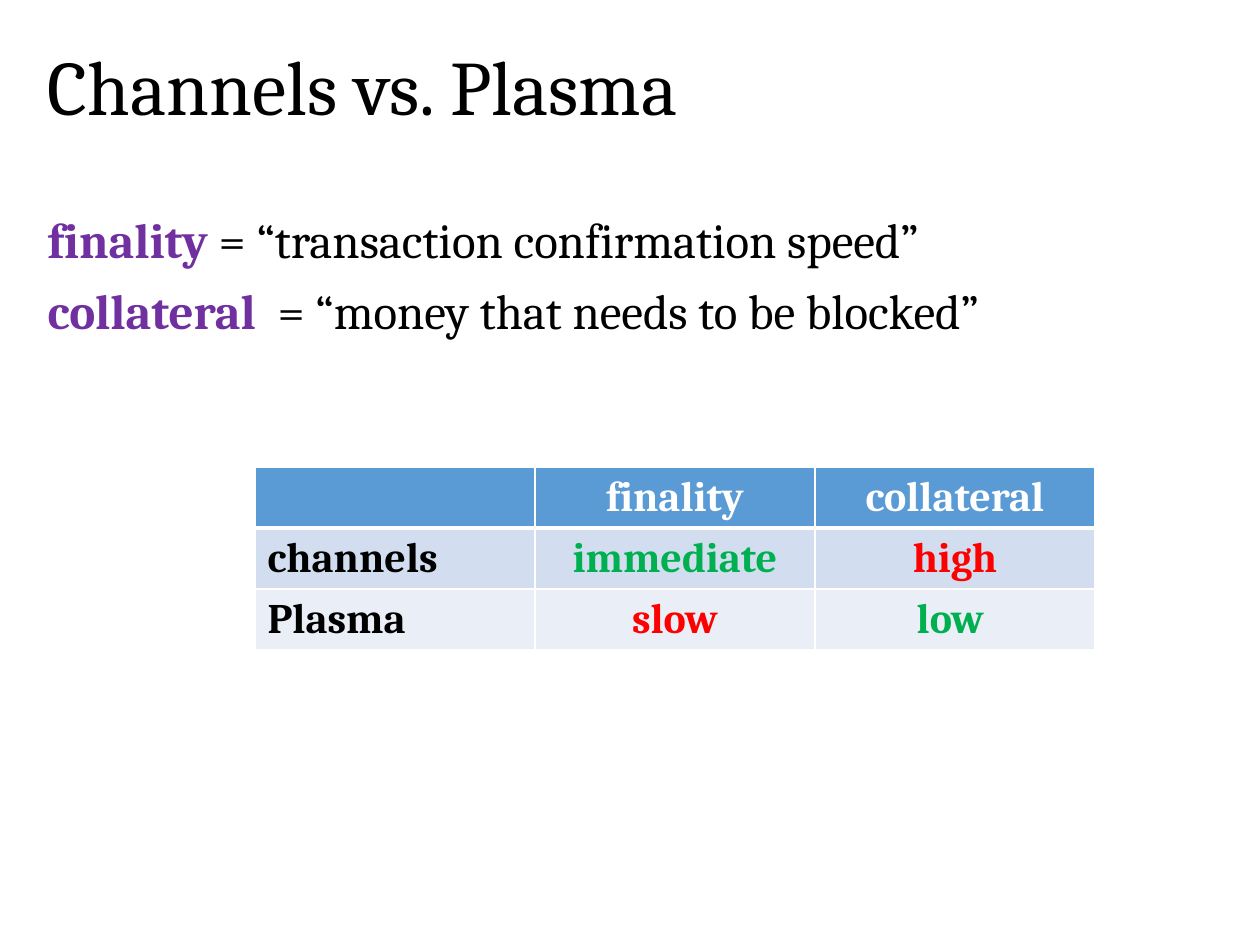
from dataclasses import dataclass

from lxml.etree import SubElement
from pptx import Presentation
from pptx.dml.color import RGBColor
from pptx.enum.text import MSO_ANCHOR, MSO_AUTO_SIZE, PP_ALIGN
from pptx.oxml.ns import qn
from pptx.util import Emu, Pt


@dataclass(frozen=True)
class Theme:
    face: str = "Cambria"
    title: int = 44
    body: int = 28
    cell: int = 24
    ink: str = "000000"
    term: str = "7030A0"
    good: str = "00B050"
    bad: str = "FF0000"
    white: str = "FFFFFF"
    head: str = "5B9BD5"
    bands: tuple = ("D2DEEF", "EAEFF7")


THEME = Theme()
SCALE = 914400 / 126
SIDES = ("lnL", "lnR", "lnT", "lnB")

TERMS = [
    ("finality", " = “transaction confirmation speed”"),
    ("collateral", "  = “money that needs to be blocked”"),
]
GRID = [
    [("", THEME.white), ("finality", THEME.white), ("collateral", THEME.white)],
    [("channels", THEME.ink), ("immediate", THEME.good), ("high", THEME.bad)],
    [("Plasma", THEME.ink), ("slow", THEME.bad), ("low ", THEME.good)],
]


def px(n):
    return Emu(round(n * SCALE))


def style(font, size, color, bold=False):
    font.name = THEME.face
    font.size = Pt(size)
    font.bold = bold
    font.color.rgb = RGBColor.from_string(color)


def place(shape, left, top, width, height):
    shape.left, shape.top = px(left), px(top)
    shape.width, shape.height = px(width), px(height)


def set_title(shape, text):
    place(shape, 35, 37, 1201, 108)
    frame = shape.text_frame
    frame.text = text
    frame.auto_size = MSO_AUTO_SIZE.NONE
    frame.vertical_anchor = MSO_ANCHOR.MIDDLE
    para = frame.paragraphs[0]
    para.alignment = PP_ALIGN.LEFT
    para.line_spacing = 0.9
    style(para.runs[0].font, THEME.title, THEME.ink)


def set_terms(shape, terms):
    """Fill the body with unbulleted lines, each a bold term and its meaning."""
    place(shape, 35, 210, 1201, 160)
    frame = shape.text_frame
    frame.auto_size = MSO_AUTO_SIZE.NONE
    for i, (term, gloss) in enumerate(terms):
        para = frame.add_paragraph() if i else frame.paragraphs[0]
        para.line_spacing = 0.9
        para.space_before = Pt(10 if i else 0)
        props = para._p.get_or_add_pPr()
        props.set("marL", "0")
        props.set("indent", "0")
        SubElement(props, qn("a:buNone"))
        for text, color, bold in ((term, THEME.term, True), (gloss, THEME.ink, False)):
            run = para.add_run()
            run.text = text
            style(run.font, THEME.body, color, bold)


def set_edge(cell, low):
    """Draw white cell borders; low is the width of the bottom one in points."""
    props = cell._tc.get_or_add_tcPr()
    for i, side in enumerate(SIDES):
        width = Pt(low if side == "lnB" else 1)
        line = props.makeelement(qn(f"a:{side}"), {"w": str(width)})
        fill = SubElement(line, qn("a:solidFill"))
        SubElement(fill, qn("a:srgbClr"), val=THEME.white)
        props.insert(i, line)


def add_grid(slide, grid):
    rows, cols = len(grid), len(grid[0])
    frame = slide.shapes.add_table(
        rows, cols, px(255), px(467), px(280 * cols), px(61 * rows))
    fills = (THEME.head, *THEME.bands)
    for r, line in enumerate(grid):
        for c, (text, color) in enumerate(line):
            cell = frame.table.cell(r, c)
            cell.text = text
            cell.fill.solid()
            cell.fill.fore_color.rgb = RGBColor.from_string(fills[r])
            set_edge(cell, 1 if r else 3)
            para = cell.text_frame.paragraphs[0]
            para.alignment = PP_ALIGN.CENTER if c else PP_ALIGN.LEFT
            for run in para.runs:
                style(run.font, THEME.cell, color, True)


def main():
    deck = Presentation()
    deck.slide_width, deck.slide_height = px(1260), px(945)
    slide = deck.slides.add_slide(deck.slide_layouts[1])
    set_title(slide.shapes.title, "Channels vs. Plasma")
    set_terms(slide.placeholders[1], TERMS)
    add_grid(slide, GRID)
    deck.save("out.pptx")


if __name__ == "__main__":
    main()
